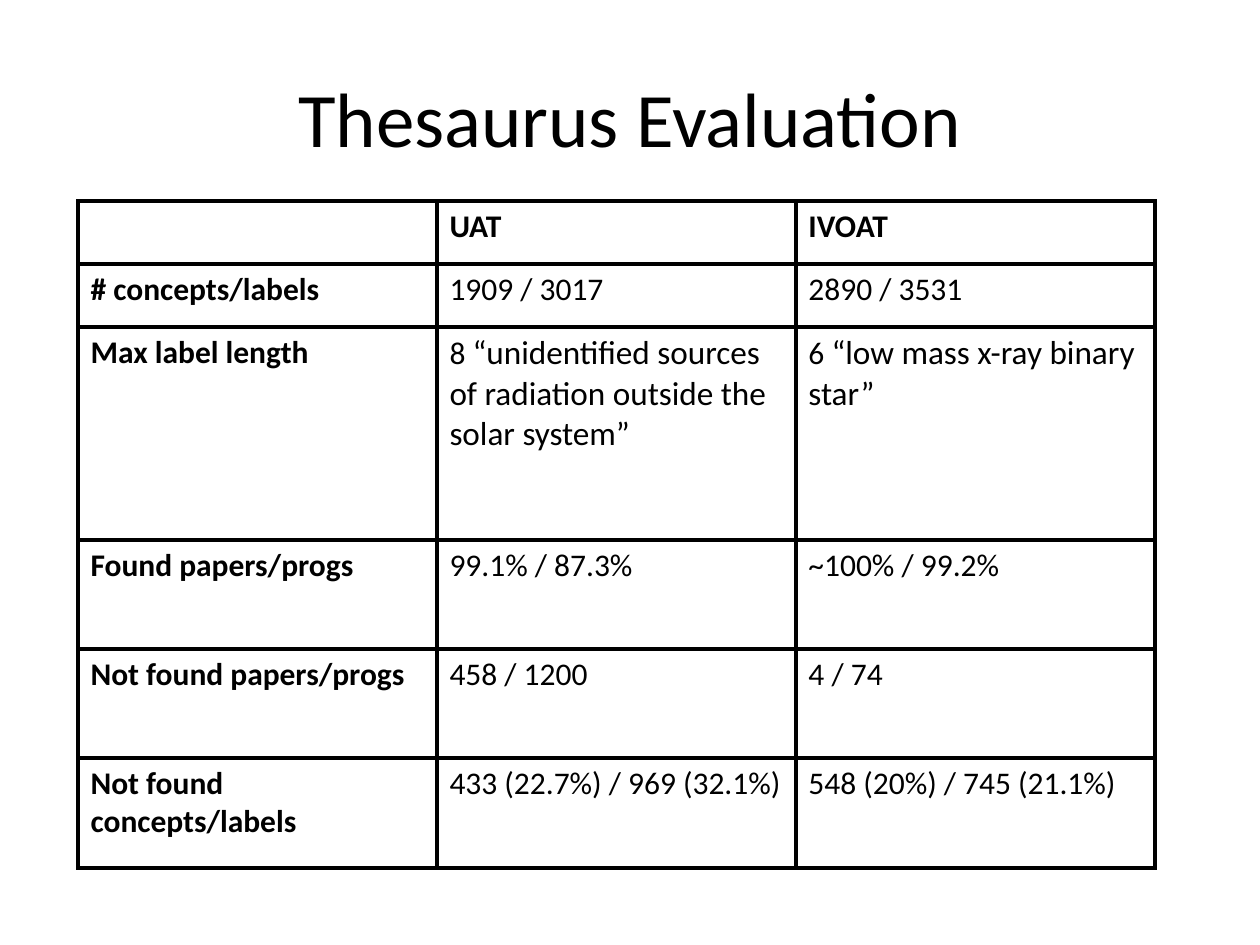
from lxml import etree
from pptx import Presentation
from pptx.dml.color import RGBColor
from pptx.enum.text import MSO_ANCHOR, PP_ALIGN
from pptx.oxml.ns import qn
from pptx.util import Emu, Pt

LEFT, CENTER = PP_ALIGN.LEFT, PP_ALIGN.CENTER
TOP, MIDDLE = MSO_ANCHOR.TOP, MSO_ANCHOR.MIDDLE
TITLE_ONLY = 5
FONT, BLACK = "Calibri", "000000"
BORDER = Pt(2.25)


def px(length):
    return Emu(round(length * 914400 / 126))


def write(frame, *parts, size=18, bold=False, align=LEFT, anchor=TOP):
    """Fill a text frame with one paragraph; a part is text or (text, size)."""
    frame.word_wrap = True
    frame.vertical_anchor = anchor
    para = frame.paragraphs[0]
    para.alignment = align
    for part in parts:
        text, points = part if isinstance(part, tuple) else (part, size)
        span = para.add_run()
        span.text = text
        span.font.name = FONT
        span.font.size = Pt(points)
        span.font.bold = bold
        span.font.color.rgb = RGBColor.from_string(BLACK)


deck = Presentation()
deck.slide_width, deck.slide_height = px(1260), px(945)
page = deck.slides.add_slide(deck.slide_layouts[TITLE_ONLY])

# Title
title = page.shapes.title
title.left, title.top, title.width, title.height = px(63), px(38), px(1134), px(158)
write(title.text_frame, "Thesaurus Evaluation", size=44, align=CENTER, anchor=MIDDLE)

# Table contents: each cell is a list of parts
rows = [
    [[], ["UAT"], ["IVOAT"]],
    [["# concepts/labels"], ["1909 / 3017"], ["2890 / 3531"]],
    [
        ["Max label length"],
        ["8 ", ("“unidentified sources of radiation outside the solar system”", 19)],
        ["6 ", ("“low mass x-ray binary star”", 19)],
    ],
    [["Found papers/progs"], ["99.1% / 87.3%"], ["~100% / 99.2%"]],
    [["Not found papers/progs"], ["458 / 1200"], ["4 / 74"]],
    [
        ["Not found concepts/labels"],
        ["433 (22.7%) / 969 (32.1%)"],
        ["548 (20%) / 745 (21.1%)"],
    ],
]
row_heights = [63, 63, 213, 109, 109, 110]
column_width = 359

# Table grid
table = page.shapes.add_table(
    len(rows), 3, px(78), px(201), px(3 * column_width), px(sum(row_heights))
).table
table.first_row = table.horz_banding = False
for column in table.columns:
    column.width = px(column_width)
for row, height in zip(table.rows, row_heights):
    row.height = px(height)

# Cells: bold header row and first column, black borders all round
for row_index, row in enumerate(rows):
    for column_index, parts in enumerate(row):
        cell = table.cell(row_index, column_index)
        heading = row_index == 0 or column_index == 0
        write(cell.text_frame, *parts, bold=heading)
        properties = cell._tc.get_or_add_tcPr()
        for side in ("a:lnL", "a:lnR", "a:lnT", "a:lnB"):
            line = etree.SubElement(properties, qn(side), w=str(BORDER))
            fill = etree.SubElement(line, qn("a:solidFill"))
            etree.SubElement(fill, qn("a:srgbClr"), val=BLACK)
        cell.fill.background()

deck.save("out.pptx")
